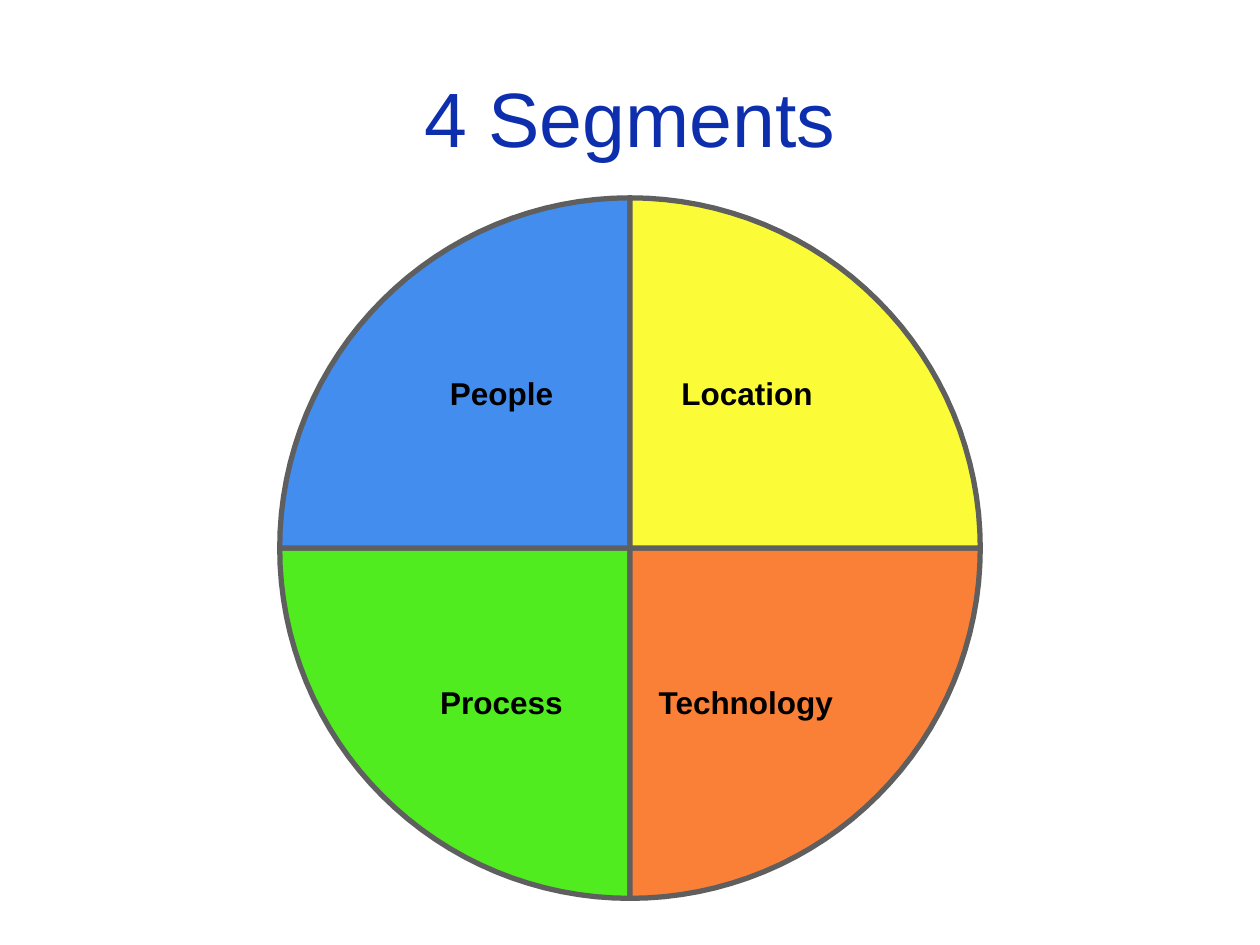
from math import cos, pi, sin

from pptx import Presentation
from pptx.dml.color import RGBColor
from pptx.enum.text import MSO_ANCHOR, PP_ALIGN
from pptx.util import Inches, Pt

BLUE = RGBColor(0x43, 0x8D, 0xEF)
YELLOW = RGBColor(0xFB, 0xFB, 0x37)
GREEN = RGBColor(0x50, 0xEC, 0x20)
ORANGE = RGBColor(0xFB, 0x80, 0x37)
GRAY = RGBColor(0x5F, 0x5F, 0x5F)
NAVY = RGBColor(0x0E, 0x2F, 0xAD)
BLACK = RGBColor(0, 0, 0)

ARC_STEPS = 32
LABEL_HEIGHT = 0.4

# Name, fill, start in quarter turns clockwise from 3 o'clock,
# label width, label centre relative to the wheel centre
SEGMENTS = [
    ("Process", GREEN, 1, 1.17, (-1.02, 1.22)),
    ("People", BLUE, 2, 1.02, (-1.02, -1.23)),
    ("Technology", ORANGE, 0, 1.6, (0.92, 1.22)),
    ("Location", YELLOW, 3, 1.24, (0.93, -1.23)),
]


def add_text(slide, text, left, top, width, height, size, color, bold=False, wrap=True):
    box = slide.shapes.add_textbox(Inches(left), Inches(top), Inches(width), Inches(height))
    tf = box.text_frame
    tf.word_wrap = wrap
    tf.vertical_anchor = MSO_ANCHOR.MIDDLE
    tf.text = text
    p = tf.paragraphs[0]
    p.alignment = PP_ALIGN.CENTER
    font = p.runs[0].font
    font.name, font.size, font.bold = "Arial", Pt(size), bold
    font.color.rgb = color


def add_quadrant(slide, cx, cy, radius, quarter, color):
    angles = [(quarter + i / ARC_STEPS) * pi / 2 for i in range(ARC_STEPS + 1)]
    arc = [(Inches(cx + radius * cos(a)), Inches(cy + radius * sin(a))) for a in angles]
    builder = slide.shapes.build_freeform(Inches(cx), Inches(cy))
    builder.add_line_segments(arc, close=True)
    sp = builder.convert_to_shape()
    sp.shadow.inherit = False
    sp.fill.solid()
    sp.fill.fore_color.rgb = color
    sp.line.color.rgb = GRAY
    sp.line.width = Pt(3)


def add_wheel(slide, left, top, size):
    radius = size / 2
    cx, cy = left + radius, top + radius
    # Quadrants
    for name, color, quarter, width, offset in SEGMENTS:
        add_quadrant(slide, cx, cy, radius, quarter, color)
    # Labels
    for name, color, quarter, width, (dx, dy) in SEGMENTS:
        add_text(slide, name, cx + dx - width / 2, cy + dy - LABEL_HEIGHT / 2,
                 width, LABEL_HEIGHT, 18, BLACK, bold=True, wrap=False)


def main():
    prs = Presentation()
    prs.slide_width, prs.slide_height = Inches(10), Inches(7.5)
    slide = prs.slides.add_slide(prs.slide_layouts[6])
    add_wheel(slide, 2.22, 1.57, 5.56)
    # Title
    add_text(slide, "4 Segments", 0.5, 0.3, 9, 1.25, 44, NAVY)
    prs.save("out.pptx")


if __name__ == "__main__":
    main()
